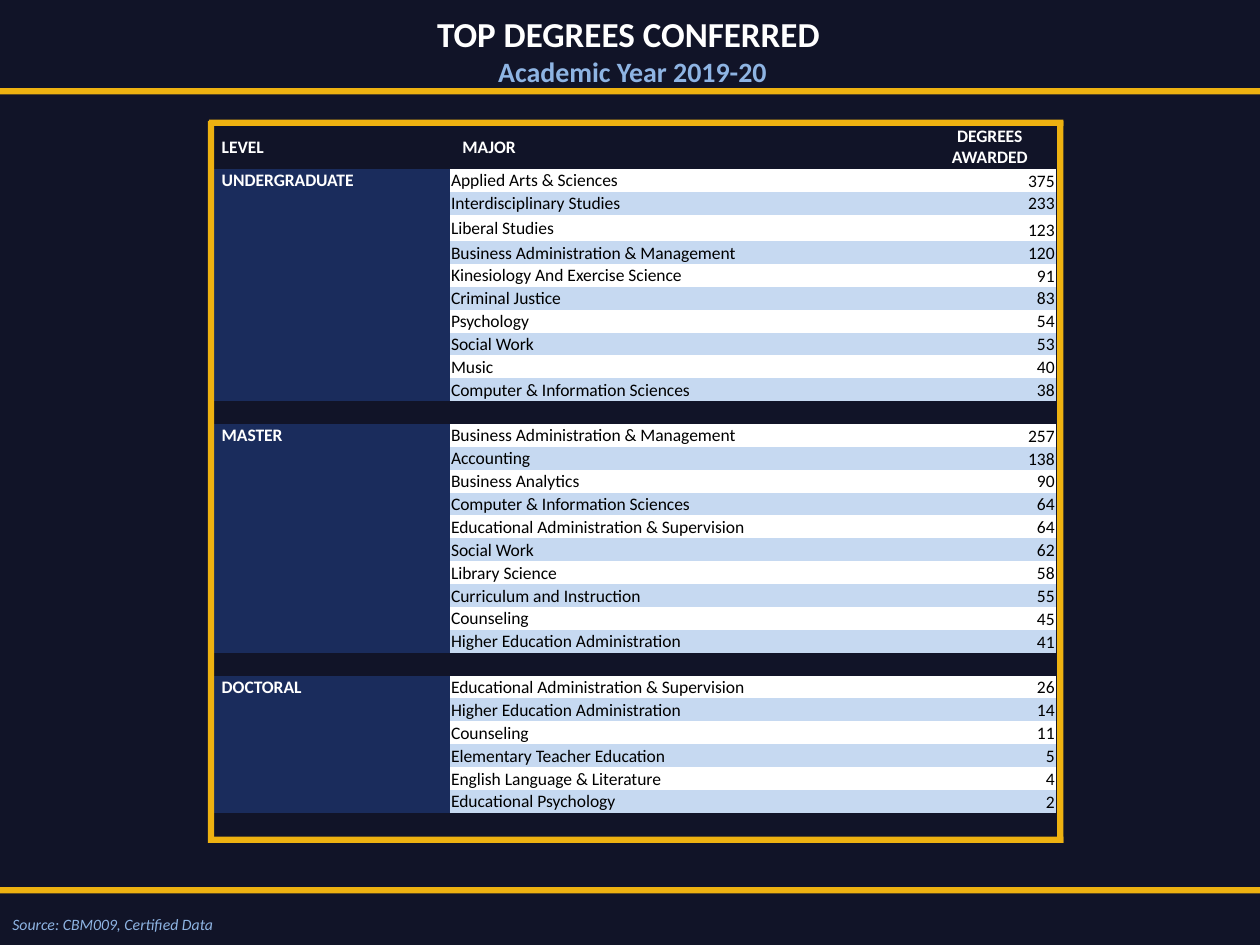
from pptx import Presentation
from pptx.dml.color import RGBColor
from pptx.enum.shapes import MSO_SHAPE
from pptx.enum.text import MSO_ANCHOR, MSO_AUTO_SIZE, PP_ALIGN
from pptx.util import Inches, Pt

RECT = MSO_SHAPE.RECTANGLE
LEFT, CENTER, RIGHT = PP_ALIGN.LEFT, PP_ALIGN.CENTER, PP_ALIGN.RIGHT
TOP, MIDDLE, BOTTOM = MSO_ANCHOR.TOP, MSO_ANCHOR.MIDDLE, MSO_ANCHOR.BOTTOM
NO_FIT = MSO_AUTO_SIZE.NONE

NAVY = RGBColor(0x11, 0x14, 0x28)
BLUE = RGBColor(0x1A, 0x2C, 0x5C)
PALE = RGBColor(0xC6, 0xD9, 0xF1)
SKY = RGBColor(0x8E, 0xB4, 0xE3)
GOLD = RGBColor(0xEE, 0xB2, 0x11)
WHITE = RGBColor(0xFF, 0xFF, 0xFF)
BLACK = RGBColor(0, 0, 0)

NO_GRID = "{2D5ABB26-0587-4C30-8999-92F81FD0307C}"
LABEL_INSET = (0.1, 0.01, 0, 0)
BODY_INSET = (0.01, 0.01, 0.01, 0)
BAR = 0.05
HEADER_HEIGHT, TALL_HEIGHT, TABLE_HEIGHT = 0.35, 0.21, 5.65

HEADERS = ["LEVEL", "MAJOR", "DEGREES AWARDED"]
DEGREES = {
    "UNDERGRADUATE": [
        ("Applied Arts & Sciences", 375),
        ("Interdisciplinary Studies", 233),
        ("Liberal Studies", 123),
        ("Business Administration & Management", 120),
        ("Kinesiology And Exercise Science", 91),
        ("Criminal Justice", 83),
        ("Psychology", 54),
        ("Social Work", 53),
        ("Music", 40),
        ("Computer & Information Sciences", 38),
    ],
    "MASTER": [
        ("Business Administration & Management", 257),
        ("Accounting", 138),
        ("Business Analytics", 90),
        ("Computer & Information Sciences", 64),
        ("Educational Administration & Supervision", 64),
        ("Social Work", 62),
        ("Library Science", 58),
        ("Curriculum and Instruction", 55),
        ("Counseling", 45),
        ("Higher Education Administration", 41),
    ],
    "DOCTORAL": [
        ("Educational Administration & Supervision", 26),
        ("Higher Education Administration", 14),
        ("Counseling", 11),
        ("Elementary Teacher Education", 5),
        ("English Language & Literature", 4),
        ("Educational Psychology", 2),
    ],
}


def write(p, text, size=10, color=WHITE, bold=False, italic=False, align=LEFT, font="Calibri"):
    p.alignment = align
    if not text:
        p._p.get_or_add_endParaRPr().set("sz", str(size * 100))
        return
    r = p.add_run()
    r.text = text
    r.font.name = font
    r.font.size = Pt(size)
    r.font.bold = bold
    r.font.italic = italic
    r.font.color.rgb = color


class DegreeSlide:
    def __init__(self, prs, background=NAVY, accent=GOLD):
        self.s = prs.slides.add_slide(prs.slide_layouts[5])
        self.accent = accent
        fill = self.s.background.fill
        fill.solid()
        fill.fore_color.rgb = background

    def title(self, x, y, w, h, heading, subtitle):
        sp = self.s.shapes.title
        sp.left, sp.top, sp.width, sp.height = map(Inches, (x, y, w, h))
        tf = sp.text_frame
        tf.auto_size = NO_FIT
        tf.vertical_anchor = TOP
        write(tf.paragraphs[0], heading, size=20, bold=True, align=CENTER)
        write(tf.add_paragraph(), subtitle, size=16, color=SKY, bold=True, align=CENTER)

    def bar(self, x, y, w, h):
        sp = self.s.shapes.add_shape(RECT, Inches(x), Inches(y), Inches(w), Inches(h))
        sp.shadow.inherit = False
        sp.fill.solid()
        sp.fill.fore_color.rgb = self.accent
        sp.line.fill.background()

    def note(self, x, y, w, h, text):
        sp = self.s.shapes.add_textbox(Inches(x), Inches(y), Inches(w), Inches(h))
        write(sp.text_frame.paragraphs[0], text, size=9, color=SKY, italic=True)

    def cell(self, cell, text, fill, inset=BODY_INSET, anchor=MIDDLE, **style):
        cell.fill.solid()
        cell.fill.fore_color.rgb = fill
        (cell.margin_left, cell.margin_top,
         cell.margin_right, cell.margin_bottom) = map(Inches, inset)
        cell.vertical_anchor = anchor
        write(cell.text_frame.paragraphs[0], text, **style)

    def table(self, x, y, widths, headers, groups):
        count = 1 + sum(len(majors) + 1 for majors in groups.values())
        frame = self.s.shapes.add_table(count, len(widths), Inches(x), Inches(y),
                                        Inches(sum(widths)), Inches(TABLE_HEIGHT))
        tbl = frame.table
        tbl.first_row = tbl.horz_banding = False
        tbl._tbl.tblPr[0].text = NO_GRID
        for column, width in zip(tbl.columns, widths):
            column.width = Inches(width)
        body = (TABLE_HEIGHT - HEADER_HEIGHT - TALL_HEIGHT) / (count - 2)
        for row in tbl.rows:
            row.height = Inches(body)
        tbl.rows[0].height = Inches(HEADER_HEIGHT)
        tbl.rows[3].height = Inches(TALL_HEIGHT)

        level, major, awarded = tbl.rows[0].cells
        self.cell(level, headers[0], NAVY, LABEL_INSET, bold=True)
        self.cell(major, headers[1], NAVY, LABEL_INSET, bold=True)
        self.cell(awarded, headers[2], NAVY, bold=True, align=CENTER)
        rows = iter(list(tbl.rows)[1:])
        for name, majors in groups.items():
            for i, (subject, number) in enumerate(majors):
                level, major, awarded = next(rows).cells
                band = PALE if i % 2 else WHITE
                self.cell(level, "" if i else name, BLUE, LABEL_INSET, bold=True)
                self.cell(major, subject, band, color=BLACK)
                self.cell(awarded, str(number), band, anchor=BOTTOM, color=BLACK, align=RIGHT)
            for spacer in next(rows).cells:
                self.cell(spacer, "", NAVY)


def main():
    prs = Presentation()
    prs.slide_width, prs.slide_height = Inches(10), Inches(7.5)
    slide = DegreeSlide(prs)
    slide.title(1.74, 0.05, 6.56, 1.28, "TOP DEGREES CONFERRED ", "Academic Year 2019-20")
    slide.table(1.66, 0.99, [1.91, 3.76, 1.05], HEADERS, DEGREES)
    slide.note(0, 7.21, 1.86, 0.25, "Source: CBM009, Certified Data")
    for y in (0.7, 7.04):
        slide.bar(0, y, 10, BAR)
    for y in (0.95, 6.64):
        slide.bar(1.66, y, 6.78, BAR)
    for x in (1.65, 8.39):
        slide.bar(x, 0.96, BAR, 5.73)
    prs.save("out.pptx")


if __name__ == "__main__":
    main()
